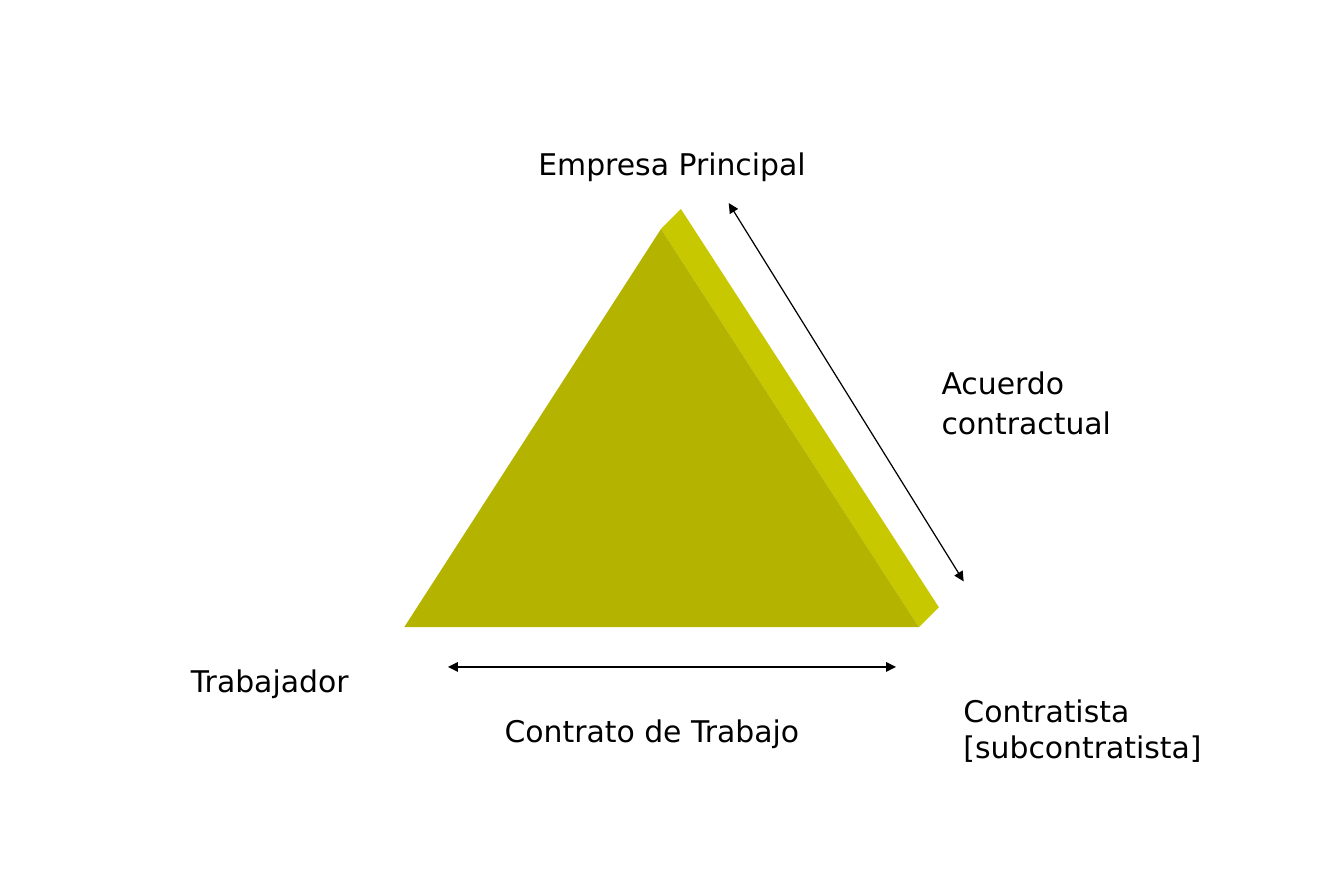
from lxml.etree import SubElement
from pptx import Presentation
from pptx.dml.color import RGBColor
from pptx.enum.shapes import MSO_CONNECTOR
from pptx.enum.text import MSO_AUTO_SIZE
from pptx.oxml.ns import qn
from pptx.util import Pt

PX = 7620  # EMU, 120 px to the inch
COLORS = {"text": "000000", "front": "B3B300", "side": "C8C800"}


class SlideBuilder:
    def __init__(self, slide, font="DejaVu Sans", size=18):
        self.shapes = slide.shapes
        self.font = font
        self.size = size

    def color(self, name):
        return RGBColor.from_string(COLORS[name])

    def polygon(self, points, fill):
        builder = self.shapes.build_freeform(*points[0], scale=PX)
        builder.add_line_segments(points[1:], close=True)
        sp = builder.convert_to_shape()
        sp.shadow.inherit = False
        sp.fill.solid()
        sp.fill.fore_color.rgb = self.color(fill)
        sp.line.fill.background()

    def label(self, text, x, y, w, h, line_spacing=None):
        sp = self.shapes.add_textbox(x * PX, y * PX, w * PX, h * PX)
        tf = sp.text_frame
        tf.word_wrap = True
        tf.auto_size = MSO_AUTO_SIZE.SHAPE_TO_FIT_TEXT
        tf.text = text
        for p in tf.paragraphs:
            p.space_before = Pt(self.size / 2)
            p.line_spacing = line_spacing
            for r in p.runs:
                r.font.name = self.font
                r.font.size = Pt(self.size)
                r.font.color.rgb = self.color("text")

    def double_arrow(self, x1, y1, x2, y2):
        line = self.shapes.add_connector(
            MSO_CONNECTOR.STRAIGHT, x1 * PX, y1 * PX, x2 * PX, y2 * PX)
        line.line.color.rgb = self.color("text")
        line.line.width = Pt(0.75)
        ln = line.line._get_or_add_ln()
        for end in ("a:headEnd", "a:tailEnd"):
            SubElement(ln, qn(end), type="triangle")
        SubElement(line._element.spPr, qn("a:effectLst"))


def main():
    prs = Presentation()
    prs.slide_width = 1350 * PX
    prs.slide_height = 900 * PX
    s = SlideBuilder(prs.slides.add_slide(prs.slide_layouts[6]))

    apex, right, left = (664, 230), (923, 630), (406, 630)
    depth = 20
    back_apex, back_right = [(x + depth, y - depth) for x, y in (apex, right)]
    s.polygon([apex, back_apex, back_right, right], "side")
    s.polygon([apex, right, left], "front")

    s.label("Empresa Principal", 529, 140, 517, 48)
    s.label("Contratista [subcontratista]", 956, 690, 371, 84)
    s.label("Trabajador", 180, 660, 214, 48)
    s.double_arrow(450, 670, 900, 670)
    s.label("Contrato de Trabajo", 495, 710, 371, 48)
    s.double_arrow(732, 204, 968, 584)
    s.label("Acuerdo\ncontractual", 934, 370, 394, 80, line_spacing=0.7)

    prs.save("out.pptx")


if __name__ == "__main__":
    main()
